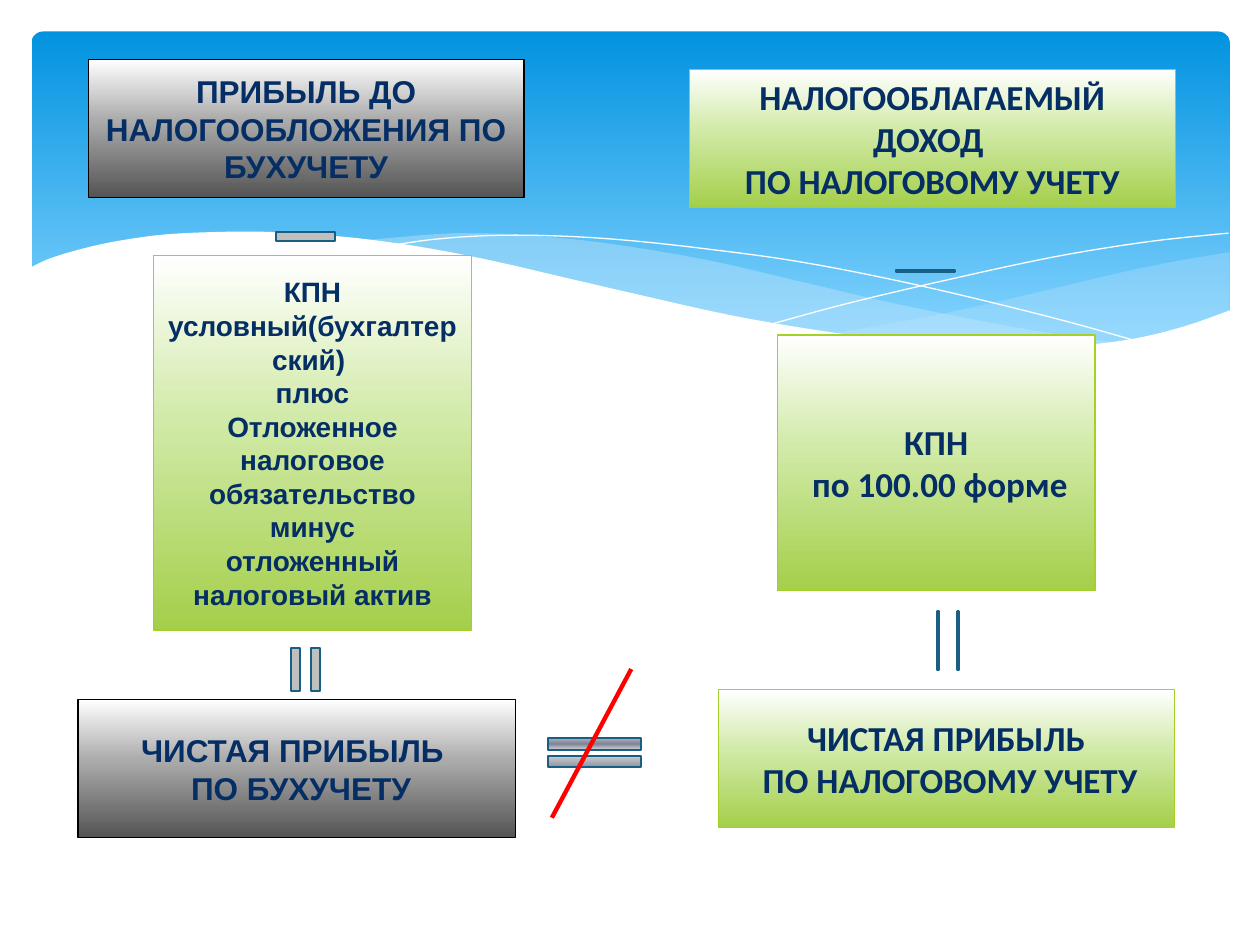
from lxml.etree import SubElement
from pptx import Presentation
from pptx.dml.color import RGBColor
from pptx.enum.shapes import MSO_CONNECTOR as Link, MSO_SHAPE as Shape
from pptx.enum.text import MSO_ANCHOR as Anchor, PP_ALIGN as Align
from pptx.oxml.ns import qn
from pptx.util import Inches, Pt

COLUMNS, ROWS = 100, 75
GREY = [(0, "FFFFFF"), (44, "ABABAB"), (100, "545454")]
GREEN = [(0, "FFFFFF"), (44, "D1EAA7"), (100, "A4CF4A")]
STEEL = [(0, "FFFFFF"), (7, "E6E6E6"), (32, "7D8496"), (47, "E6E6E6"), (85, "7D8496"), (100, "E6E6E6")]
SKY = [(0, "0293E0"), (90, "83D3FE")]
ACCOUNTING = dict(font="Arial", size=18, fill=GREY, edge="000000")
DEFERRED = dict(font="Arial", size=16, fill=GREEN, edge="A5D028")
TAX = dict(font="Calibri", size=20, fill=GREEN, edge="A5D028")


def color(value):
    return RGBColor.from_string(value)


def smooth(knots, steps=6):
    ends = [knots[0], *knots, knots[-1]]
    points = [knots[0]]
    for a, b, c, d in zip(ends, ends[1:], ends[2:], ends[3:]):
        for step in range(1, steps + 1):
            t = step / steps
            points.append(tuple(
                (2 * q + (r - p) * t + (2 * p - 5 * q + 4 * r - s) * t**2
                 + (3 * q - p - 3 * r + s) * t**3) / 2
                for p, q, r, s in zip(a, b, c, d)))
    return points


class SlideBuilder:
    ink = "052E65"
    sign_edge = "195F84"

    def __init__(self, deck):
        self.slide = deck.slides.add_slide(deck.slide_layouts[6])
        self.shapes = self.slide.shapes
        self.column = deck.slide_width / COLUMNS
        self.row = deck.slide_height / ROWS

    def place(self, x, y):
        return round(x * self.column), round(y * self.row)

    def paint(self, shape, fill=None, edge=None, width=0.75, opacity=None):
        shape.shadow.inherit = False
        if fill is None:
            shape.fill.background()
        elif isinstance(fill, list):
            shape.fill.gradient()
            shape.fill.gradient_angle = 270
            stops = shape._element.spPr.find(qn("a:gradFill")).find(qn("a:gsLst"))
            stops.clear()
            for position, value in fill:
                stop = SubElement(stops, qn("a:gs"), pos=str(position * 1000))
                SubElement(stop, qn("a:srgbClr"), val=value)
        else:
            shape.fill.solid()
            shape.fill.fore_color.rgb = color(fill)
            if opacity:
                tone = shape._element.spPr.find(qn("a:solidFill"))[0]
                SubElement(tone, qn("a:alpha"), val=str(opacity * 1000))
        if edge:
            shape.line.color.rgb = color(edge)
            shape.line.width = Pt(width)
        else:
            shape.line.fill.background()

    def figure(self, kind, at, **look):
        shape = self.shapes.add_shape(kind, *self.place(*at[:2]), *self.place(*at[2:]))
        self.paint(shape, **look)
        return shape

    def sign(self, kind, at, turn=0, fill="BFBFBF"):
        self.figure(kind, at, fill=fill, edge=self.sign_edge, width=1.25).rotation = turn

    def curve(self, *parts, closed=True, **look):
        start, *rest = [self.place(*point) for part in parts for point in smooth(part)]
        outline = self.shapes.build_freeform(*start, scale=1.0)
        outline.add_line_segments(rest, close=closed)
        self.paint(outline.convert_to_shape(), **look)

    def box(self, at, lines, font, size, **look):
        frame = self.figure(Shape.RECTANGLE, at, **look).text_frame
        for name, value in dict(word_wrap=True, vertical_anchor=Anchor.MIDDLE).items():
            setattr(frame, name, value)
        for index, line in enumerate(lines):
            paragraph = frame.add_paragraph() if index else frame.paragraphs[0]
            paragraph.alignment = Align.CENTER
            run = paragraph.add_run()
            run.text = line
            for name, value in dict(name=font, size=Pt(size), bold=True).items():
                setattr(run.font, name, value)
            run.font.color.rgb = color(self.ink)

    def stroke(self, start, end, tone, width):
        line = self.shapes.add_connector(Link.STRAIGHT, *self.place(*start), *self.place(*end))
        line.line.color.rgb = color(tone)
        line.line.width = Pt(width)
        SubElement(line._element.spPr, qn("a:effectLst"))


def draw_backdrop(page):
    sky = page.figure(Shape.ROUNDED_RECTANGLE, (2.5, 2.5, 95.1, 27), fill=SKY)
    sky.adjustments[0] = 0.034
    page.curve(
        [(97.6, 20), (93.5, 20.7), (89.1, 21.6), (83.2, 23), (75.3, 24.8), (66.1, 26.5)],
        [(66.1, 26.5), (71.9, 27.2), (76.9, 27.7), (81.4, 27.8), (85.4, 27.6),
         (89.7, 27), (93.5, 26.2), (97.6, 24.7)],
        fill="C6E7FC", opacity=29)
    page.curve(
        [(89.3, 27.3), (83.7, 26.5), (77.5, 25.4), (70.6, 24), (62.9, 22.2), (56.9, 20.8),
         (51.4, 19.8), (46.5, 19.1), (42, 18.7), (38, 18.5), (34.4, 18.6), (28.6, 19.1)],
        [(28.6, 19.1), (34.2, 19.9), (40.4, 21.1), (44.9, 22.2), (53, 24), (60.1, 25.5),
         (66.5, 26.6), (72.2, 27.4), (77.3, 27.7), (81.8, 27.8), (85.7, 27.7), (89.3, 27.3)],
        fill="C6E7FC", opacity=40)
    page.curve(
        [(30.9, 19.5), (34.4, 19), (38.7, 18.7), (43.3, 18.7), (48.9, 19), (55.6, 19.7),
         (63.6, 20.8), (72.7, 22.6), (83.1, 25.1), (90.7, 27.2)],
        closed=False, edge="FFFFFF", width=0)
    page.curve(
        [(61.3, 25.7), (67.2, 24.1), (74.8, 22.3), (83.6, 20.4), (91, 19.2), (97.5, 18.5)],
        closed=False, edge="FFFFFF", width=0)
    page.curve(
        [(97.7, 24.6), (94, 25.9), (89.9, 26.9), (85, 27.5), (80.9, 27.7), (76.1, 27.5),
         (70.8, 27), (64.8, 26.2), (57.9, 25), (50.3, 23.3), (44.7, 22), (39.1, 20.7),
         (34, 19.7), (29.2, 19), (25, 18.6), (21.1, 18.4), (17.7, 18.4), (13.2, 18.6),
         (9.5, 19.1), (6.7, 19.7), (4, 20.5), (2.3, 21.3)],
        [(2.3, 32.9), (97.7, 32.9)],
        fill="FFFFFF")


def draw_accounting(page):
    page.box((7, 4.7, 34.6, 11), ["ПРИБЫЛЬ ДО НАЛОГООБЛОЖЕНИЯ ПО БУХУЧЕТУ"], **ACCOUNTING)
    page.sign(Shape.MATH_MINUS, (21.1, 17.2, 6.3, 3.1))
    page.box((12.2, 20.3, 25.2, 29.7), [
        "КПН условный(бухгалтерский) ", "плюс", "Отложенное налоговое обязательство",
        "минус", "отложенный налоговый актив"], **DEFERRED)
    for left in (21.1, 22.7):
        page.sign(Shape.MATH_MINUS, (left, 51.6, 4.7, 3.1), turn=90)
    page.box((6.2, 55.5, 34.7, 11), ["ЧИСТАЯ ПРИБЫЛЬ ", " ПО БУХУЧЕТУ"], **ACCOUNTING)


def draw_tax(page):
    page.box((54.7, 5.5, 38.6, 11), ["НАЛОГООБЛАГАЕМЫЙ ДОХОД ", "ПО НАЛОГОВОМУ УЧЕТУ"], **TAX)
    page.sign(Shape.MATH_MINUS, (70.3, 21.1, 6.3, 0.8))
    page.box((61.7, 26.6, 25.2, 20.3), ["КПН", " по 100.00 форме"], **TAX)
    for left in (71.3, 72.9):
        page.sign(Shape.MATH_MINUS, (left, 50.6, 6.3, 0.5), turn=90)
    page.box((57, 54.7, 36.2, 11), ["ЧИСТАЯ ПРИБЫЛЬ", " ПО НАЛОГОВОМУ УЧЕТУ"], **TAX)


def main():
    deck = Presentation()
    deck.slide_width, deck.slide_height = Inches(10), Inches(7.5)
    page = SlideBuilder(deck)
    draw_backdrop(page)
    draw_accounting(page)
    draw_tax(page)
    page.sign(Shape.MATH_EQUAL, (42.2, 57.8, 10, 3.9), fill=STEEL)
    page.stroke((50.1, 53.1), (43.8, 64.9), "FF0000", 2.5)
    deck.save("out.pptx")


if __name__ == "__main__":
    main()
